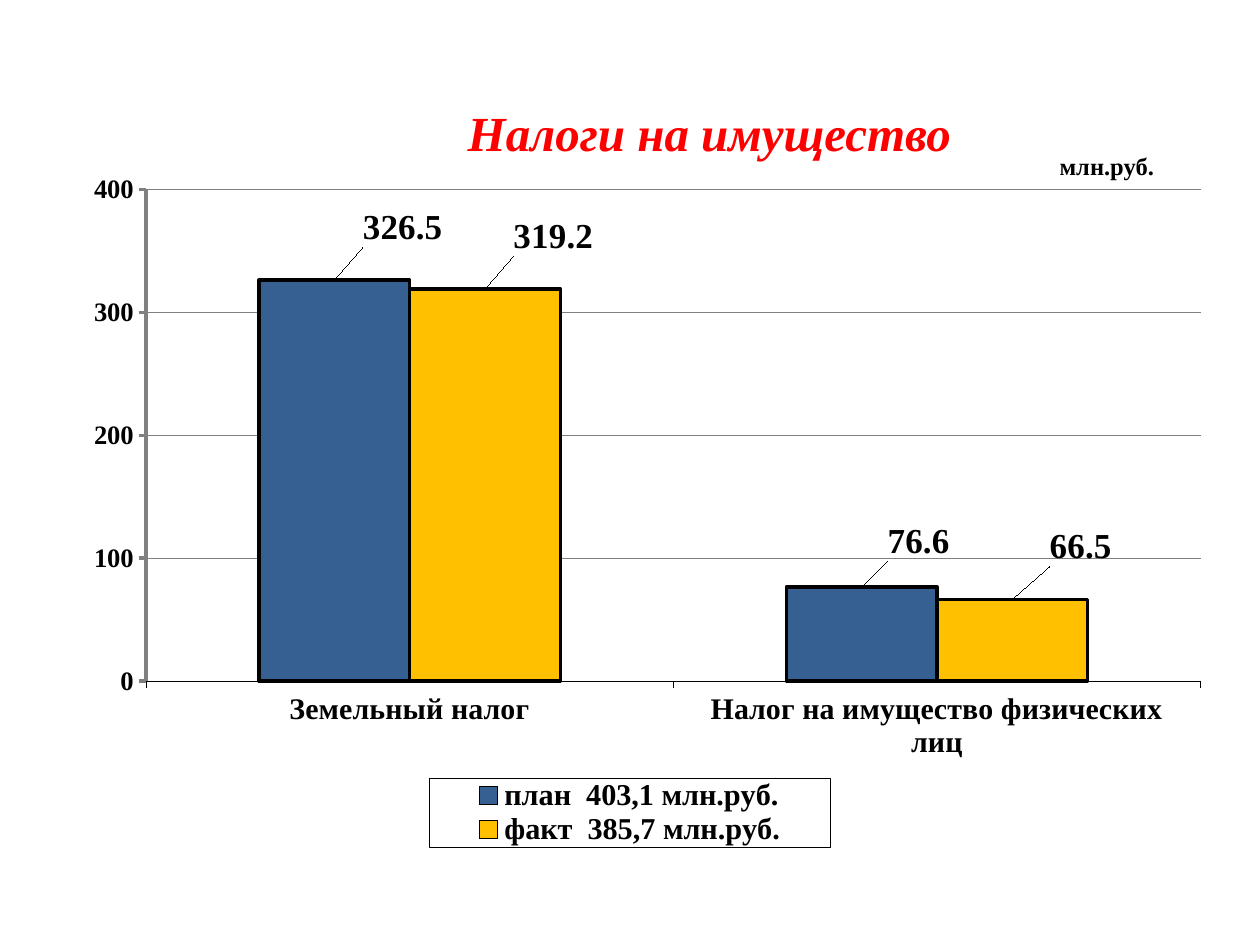
from lxml import etree
from pptx import Presentation
from pptx import util as u
from pptx.chart import data as chart_data
from pptx.dml.color import RGBColor
from pptx.enum import chart as ch, text
from pptx.oxml import ns

FONT = "Times New Roman"
COLORS = {"title": "FF0000", "text": "000000", "outline": "000000",
          "axis": "808080", "plan": "376092", "fact": "FFC000"}
CATEGORIES = ["Земельный налог", "Налог на имущество физических лиц"]
# Name, colour, values, label offsets as fractions of the chart
SERIES = [
    ("план  403,1 млн.руб.", "plan", (326.5, 76.6), ((0.06, -0.04), (0.05, -0.03))),
    ("факт  385,7 млн.руб.", "fact", (319.2, 66.5), ((0.06, -0.04), (0.06, -0.04))),
]


def apply(target, **formats):
    for name, value in formats.items():
        setattr(target, name, value)


def style_font(font, size, color="text", italic=False):
    apply(font, name=FONT, size=u.Pt(size), bold=True, italic=italic)
    font.color.rgb = RGBColor.from_string(COLORS[color])


def style_line(line, width, color="outline"):
    line.width = u.Pt(width)
    line.color.rgb = RGBColor.from_string(COLORS[color])


def add_label(slide, box, words, size, align, **font_formats):
    shape = slide.shapes.add_textbox(*map(u.Cm, box))
    apply(shape.text_frame, word_wrap=True, vertical_anchor=text.MSO_ANCHOR.MIDDLE)
    paragraph = shape.text_frame.paragraphs[0]
    paragraph.alignment = align
    run = paragraph.add_run()
    run.text = words
    style_font(run.font, size, **font_formats)


def set_layout(parent, after, **values):
    """Give a chart part a manual layout, placed after the named child."""
    for old in parent.findall(ns.qn("c:layout")):
        parent.remove(old)
    layout = etree.Element(ns.qn("c:layout"))
    manual = etree.SubElement(layout, ns.qn("c:manualLayout"))
    for name, value in values.items():
        etree.SubElement(manual, ns.qn(f"c:{name}")).set("val", str(value))
    if after is None:
        parent.insert(0, layout)
    else:
        parent.find(ns.qn(after)).addnext(layout)


def style_axes(chart):
    category, value = chart.category_axis, chart.value_axis
    apply(category, tick_label_position=ch.XL_TICK_LABEL_POSITION.LOW,
          major_tick_mark=ch.XL_TICK_MARK.OUTSIDE)
    apply(value, minimum_scale=0, maximum_scale=400, major_unit=100,
          has_major_gridlines=True, major_tick_mark=ch.XL_TICK_MARK.OUTSIDE)
    apply(value.tick_labels, number_format="0", number_format_is_linked=False)
    style_font(category.tick_labels.font, 17.1)
    style_font(value.tick_labels.font, 15.2)
    style_line(category.format.line, 0.47)
    style_line(value.format.line, 1.88, "axis")
    style_line(value.major_gridlines.format.line, 0.47, "axis")


def style_series(series, color, offsets):
    apply(series, smooth=False) if hasattr(series, "smooth") else None
    series.format.fill.solid()
    series.format.fill.fore_color.rgb = RGBColor.from_string(COLORS[color])
    style_line(series.format.line, 1.88)
    labels = series.data_labels
    apply(labels, show_value=True, number_format="0.0", number_format_is_linked=False)
    style_font(labels.font, 20)
    for index, (x, y) in enumerate(offsets):
        label = series.points[index].data_label
        style_font(label.font, 20)
        label.position = ch.XL_LABEL_POSITION.OUTSIDE_END
        element = labels._element.dLbl_lst[index]
        set_layout(element, "c:idx", x=x, y=y)


def style_legend(chart):
    chart.has_legend = True
    legend = chart.legend
    apply(legend, position=ch.XL_LEGEND_POSITION.RIGHT, include_in_layout=False)
    style_font(legend.font, 17.3)
    element = legend._element
    set_layout(element, "c:legendPos", xMode="edge", yMode="edge",
               x=0.305, y=0.865, w=0.352, h=0.099)
    # Thin frame around the legend
    frame = etree.Element(ns.qn("c:spPr"))
    line = etree.SubElement(frame, ns.qn("a:ln"), w=str(u.Pt(0.47)))
    fill = etree.SubElement(line, ns.qn("a:solidFill"))
    etree.SubElement(fill, ns.qn("a:srgbClr"), val=COLORS["outline"])
    element.find(ns.qn("c:txPr")).addprevious(frame)


def add_tax_chart(slide, box):
    tax_data = chart_data.CategoryChartData()
    tax_data.categories = CATEGORIES
    for name, _, values, _ in SERIES:
        tax_data.add_series(name, values)
    chart = slide.shapes.add_chart(ch.XL_CHART_TYPE.COLUMN_CLUSTERED,
                                   *map(u.Cm, box), tax_data).chart
    chart.has_title = False
    style_font(chart.font, 20.3)
    plot = chart.plots[0]
    apply(plot, gap_width=150, overlap=0, vary_by_categories=False)
    style_axes(chart)
    for series, (_, color, _, offsets) in zip(plot.series, SERIES):
        style_series(series, color, offsets)
    style_legend(chart)
    plot_area = chart._chartSpace.chart.plotArea
    set_layout(plot_area, None, layoutTarget="inner", xMode="edge", yMode="edge",
               x=0.057, y=0.021, w=0.924, h=0.705)


def main():
    presentation = Presentation()
    apply(presentation, slide_width=u.Cm(25.4), slide_height=u.Cm(19.05))
    slide = presentation.slides.add_slide(presentation.slide_layouts[6])
    # Heading
    add_label(slide, (6.78, 1.7, 15.04, 1.9), "Налоги на имущество", 28,
              text.PP_ALIGN.CENTER, color="title", italic=True)
    # Plan and actual revenue
    add_tax_chart(slide, (1.63, 3.53, 23.01, 14.05))
    # Unit of measure
    add_label(slide, (21.11, 2.92, 2.74, 0.86), "млн.руб.", 14, text.PP_ALIGN.LEFT)
    presentation.save("out.pptx")


if __name__ == "__main__":
    main()
